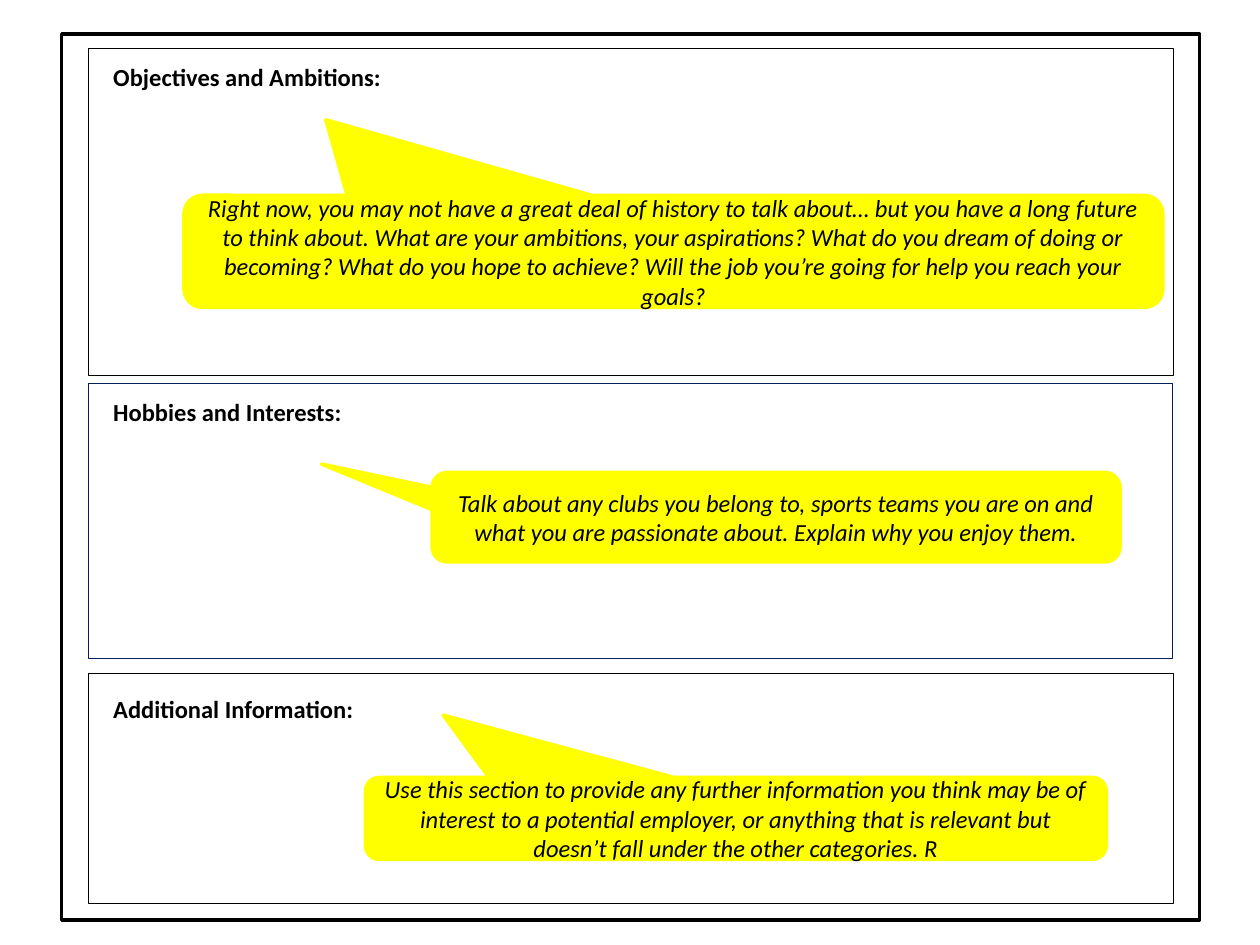
from dataclasses import dataclass
from pptx import Presentation
from pptx.dml.color import RGBColor as Color
from pptx.enum.shapes import MSO_SHAPE as Shape
from pptx.enum.text import MSO_ANCHOR as Anchor, MSO_AUTO_SIZE as Fit, PP_ALIGN as Align
from pptx.util import Inches, Pt


@dataclass(frozen=True)
class Theme:
    """Colours, font and sizes of the slide."""
    black: Color = Color(0, 0, 0)
    navy: Color = Color(0x00, 0x20, 0x60)
    yellow: Color = Color(0xFF, 0xFF, 0)
    font: str = "Calibri"
    size: Pt = Pt(14)
    thick: Pt = Pt(2)
    thin: Pt = Pt(0.25)


THEME = Theme()

SECTIONS = [
    dict(box=(0.7, 0.38, 8.61, 2.6), title="Objectives and Ambitions:",
         head=(0.06, 3.99), edge=THEME.black,
         note=(1.46, 1.55, 7.77, 0.89), tip=(-0.355, -1.174),
         words="Right now, you may not have a great deal of history to talk about… "
               "but you have a long future to think about. What are your ambitions, "
               "your aspirations? What do you dream of doing or becoming? What do you "
               "hope to achieve? Will the job you’re going for help you reach your goals?"),
    dict(box=(0.7, 3.04, 8.6, 2.18), title="Hobbies and Interests:",
         head=(0.06, 2.03), edge=THEME.navy,
         note=(3.43, 3.75, 5.46, 0.71), tip=(-0.661, -0.595),
         words="Talk about any clubs you belong to, sports teams you are on and what "
               "you are passionate about. Explain why you enjoy them."),
    dict(box=(0.7, 5.34, 8.61, 1.83), title="Additional Information:",
         head=(0.12, 2.12), edge=THEME.black,
         note=(2.9, 6.17, 5.88, 0.65), tip=(-0.395, -1.261),
         words="Use this section to provide any further information you think may be of "
               "interest to a potential employer, or anything that is relevant but "
               "doesn’t fall under the other categories. R"),
]


def write(frame, text, bold=False, italic=False):
    """Set the text of a frame in the theme font."""
    frame.text = text
    font = frame.paragraphs[0].runs[0].font
    font.name, font.size = THEME.font, THEME.size
    font.bold, font.italic = bold, italic
    font.color.rgb = THEME.black


def add_frame(slide, box, color, width):
    """Draw an unfilled outline around a box."""
    shape = slide.shapes.add_shape(Shape.FLOWCHART_PROCESS, *map(Inches, box))
    shape.shadow.inherit = False
    shape.fill.background()
    shape.line.color.rgb = color
    shape.line.width = width


def add_head(slide, box, text):
    """Place a bold section heading in a box."""
    frame = slide.shapes.add_textbox(*map(Inches, box)).text_frame
    frame.word_wrap = True
    frame.auto_size = Fit.SHAPE_TO_FIT_TEXT
    write(frame, text, bold=True)


def add_note(slide, box, tip, text):
    """Place a yellow callout whose tip is relative to its box."""
    shape = slide.shapes.add_shape(Shape.ROUNDED_RECTANGULAR_CALLOUT, *map(Inches, box))
    shape.shadow.inherit = False
    shape.adjustments[0], shape.adjustments[1] = tip
    shape.fill.solid()
    shape.fill.fore_color.rgb = THEME.yellow
    shape.line.color.rgb = THEME.yellow
    shape.line.width = THEME.thick
    frame = shape.text_frame
    frame.word_wrap = True
    frame.vertical_anchor = Anchor.MIDDLE
    write(frame, text, italic=True)
    frame.paragraphs[0].alignment = Align.CENTER


def add_section(slide, box, title, head, edge, note, tip, words):
    """Build a framed section with its heading and callout."""
    left, top = box[:2]
    drop, width = head
    add_frame(slide, box, edge, THEME.thin)
    add_head(slide, (left + 0.1, top + drop, width, 0.34), title)
    add_note(slide, note, tip, words)


def main():
    """Build and save the slide."""
    deck = Presentation()
    deck.slide_width, deck.slide_height = Inches(10), Inches(7.5)
    slide = deck.slides.add_slide(deck.slide_layouts[6])
    add_frame(slide, (0.49, 0.27, 9.03, 7.03), THEME.black, THEME.thick)
    for part in SECTIONS:
        add_section(slide, **part)
    deck.save("out.pptx")


if __name__ == "__main__":
    main()
